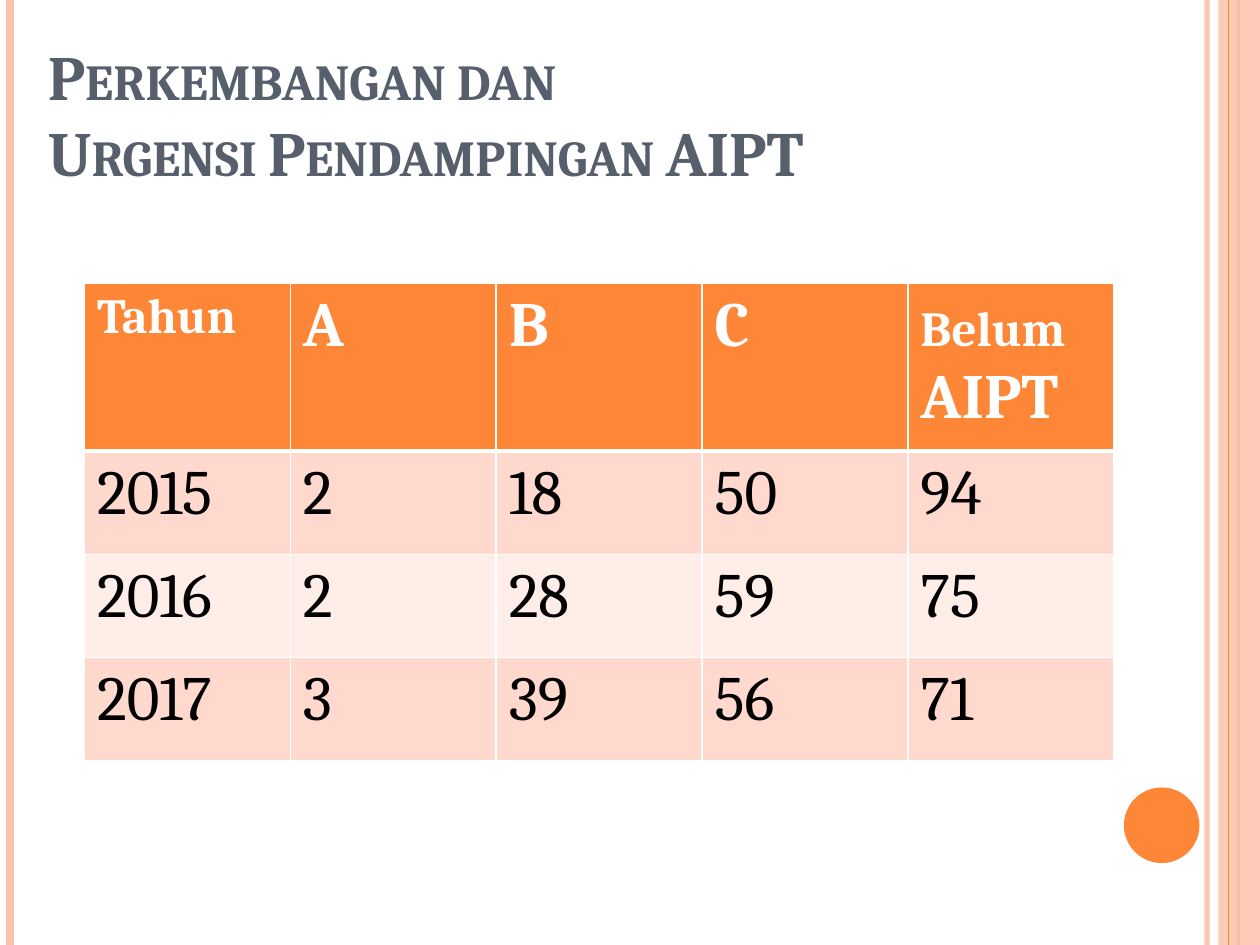
from lxml.etree import SubElement
from pptx import Presentation
from pptx.dml.color import RGBColor
from pptx.enum.shapes import MSO_CONNECTOR, MSO_SHAPE
from pptx.enum.text import MSO_ANCHOR, MSO_AUTO_SIZE, PP_ALIGN
from pptx.oxml.ns import qn
from pptx.util import Inches, Pt

FONT = "Cambria"
ORANGE, PEACH, WHITE = "FE8637", "FEC3AE", "FFFFFF"
BANDS = ["FFD9CE", "FFEDE8"]
ROWS = [
    ["2015", "2", "18", "50", "94"],
    ["2016", "2", "28", "59", "75"],
    ["2017", "3", "39", "56", "71"],
]
# Each header cell is a list of (text, size) runs
HEADS = [[("Tahun", 28)], [("A", 36)], [("B", 36)], [("C", 36)],
         [("Belum", 28), (" AIPT", 36)]]


def paint(target, color, alpha=100):
    """Give a fill a solid colour, with opacity in percent."""
    target.solid()
    target.fore_color.rgb = RGBColor.from_string(color)
    if alpha < 100:
        for node in target._xPr.iter(qn("a:srgbClr")):
            SubElement(node, qn("a:alpha"), val=str(alpha * 1000))


def style(font, size, color, bold):
    font.name, font.size, font.bold = FONT, Pt(size), bold
    font.color.rgb = RGBColor.from_string(color)


def add_rule(slide, x, height, color, width, alpha=100):
    line = slide.shapes.add_connector(
        MSO_CONNECTOR.STRAIGHT, Inches(x), 0, Inches(x), Inches(height))
    line.line.width = Pt(width)
    paint(line.line.fill, color, alpha)
    SubElement(line._element.spPr, qn("a:effectLst"))


def add_block(slide, kind, left, top, width, height, color, alpha=100):
    block = slide.shapes.add_shape(
        kind, Inches(left), Inches(top), Inches(width), Inches(height))
    block.shadow.inherit = False
    block.line.fill.background()
    paint(block.fill, color, alpha)


def add_frame(slide, width, height):
    """Side stripes and the dot."""
    add_rule(slide, width - 0.42, height, PEACH, 3, 93)
    add_rule(slide, 0.08, height, PEACH, 4.5)
    add_rule(slide, width - 0.17, height, ORANGE, 1.5)
    add_block(slide, MSO_SHAPE.RECTANGLE, width - 0.33, 0, 0.33, height, PEACH, 87)
    add_rule(slide, width - 0.25, height, ORANGE, 0.75)
    add_block(slide, MSO_SHAPE.OVAL, width - 1.08, height - 1.25, 0.6, 0.6, ORANGE)


def set_title(slide, left, top, width, height):
    title = slide.shapes.title
    title.left, title.top = Inches(left), Inches(top)
    title.width, title.height = Inches(width), Inches(height)
    frame = title.text_frame
    frame.auto_size = MSO_AUTO_SIZE.NONE
    frame.vertical_anchor = MSO_ANCHOR.BOTTOM
    frame.text = "Perkembangan dan \vUrgensi Pendampingan AIPT"
    par = frame.paragraphs[0]
    par.alignment = PP_ALIGN.LEFT
    style(par.font, 36, "575F6D", True)
    for run in par.runs:
        run.font._element.set("cap", "small")


def set_edges(cell, top, bottom):
    """White cell borders; widths in points."""
    props = cell._tc.get_or_add_tcPr()
    for side, width in zip("LRTB", (1, 1, top, bottom)):
        edge = SubElement(props, qn(f"a:ln{side}"), w=str(Pt(width)))
        fill = SubElement(edge, qn("a:solidFill"))
        SubElement(fill, qn("a:srgbClr"), val=WHITE)


def add_grid(slide, left, top, width, head, row):
    """Table of counts by year."""
    cells = HEADS, *[[[(text, 36)] for text in line] for line in ROWS]
    table = slide.shapes.add_table(
        len(cells), len(HEADS), Inches(left), Inches(top),
        Inches(width), Inches(head + row * len(ROWS))).table
    for r, line in enumerate(cells):
        table.rows[r].height = Inches(row if r else head)
        for c, runs in enumerate(line):
            cell = table.cell(r, c)
            set_edges(cell, 3 if r == 1 else 1, 1 if r else 3)
            paint(cell.fill, BANDS[(r - 1) % 2] if r else ORANGE)
            par = cell.text_frame.paragraphs[0]
            for text, size in runs:
                run = par.add_run()
                run.text = text
                style(run.font, size, "000000" if r else WHITE, r == 0)


def main():
    deck = Presentation()
    deck.slide_width, deck.slide_height = Inches(10), Inches(7.5)
    slide = deck.slides.add_slide(deck.slide_layouts[5])
    add_frame(slide, 10, 7.5)
    set_title(slide, 0.28, 0.3, 9.21, 1.25)
    add_grid(slide, 0.67, 2.25, 8.17, 1.33, 0.82)
    deck.save("out.pptx")


if __name__ == "__main__":
    main()
